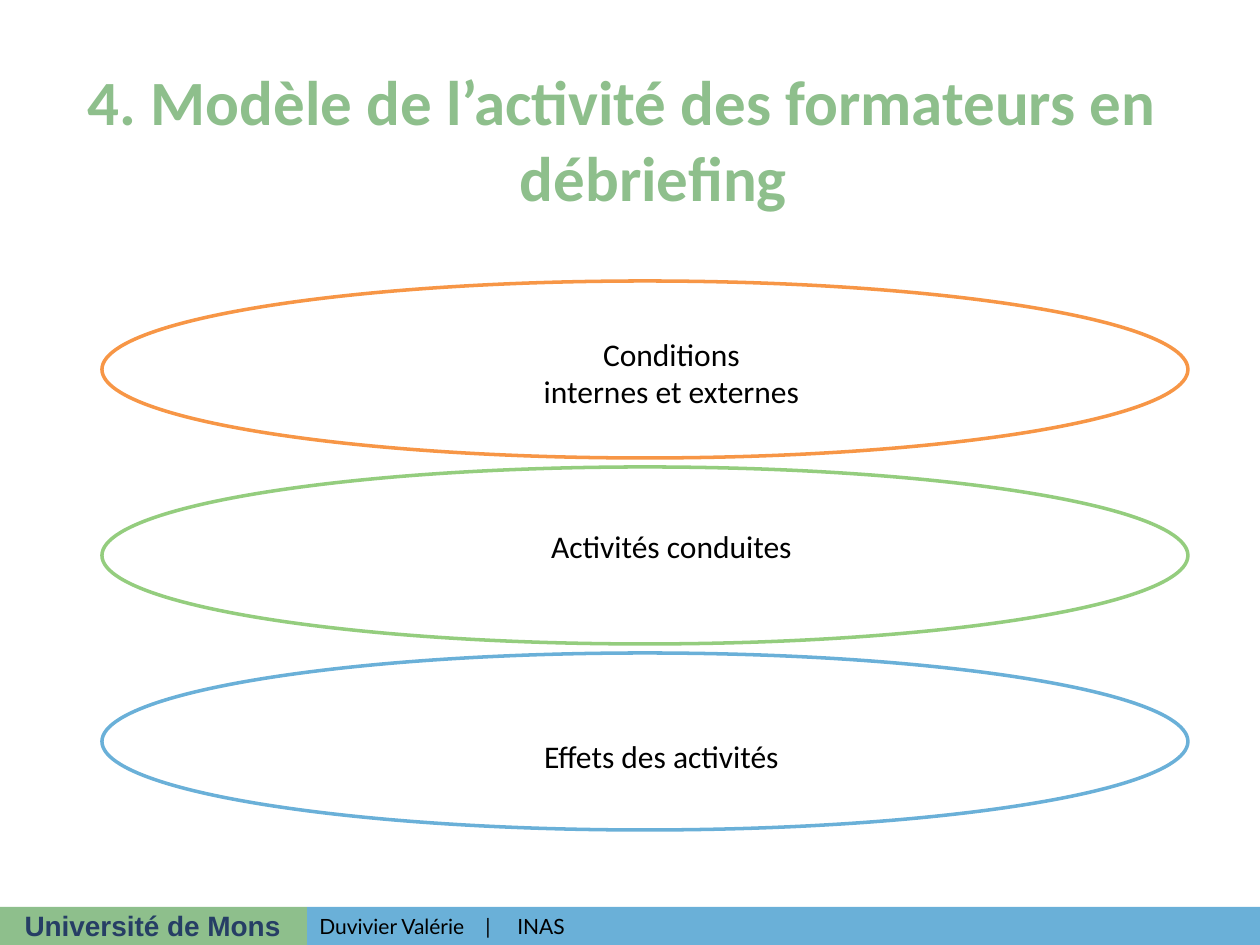
"""Build the slide on the model of trainers' activity in debriefing."""
from dataclasses import dataclass

import lxml.etree
import pptx
import pptx.dml.color
import pptx.enum.shapes
import pptx.enum.text
import pptx.oxml.ns
import pptx.util

EMU_PER_PX = 914400 / 126
SHAPES = pptx.enum.shapes.MSO_SHAPE
ALIGN = pptx.enum.text.PP_ALIGN
ANCHOR = pptx.enum.text.MSO_ANCHOR


@dataclass(frozen=True)
class Theme:
    green: str = "8EBF8C"
    blue: str = "6AB0D8"
    orange: str = "F79646"
    leaf: str = "94CD7E"
    navy: str = "263E65"
    black: str = "000000"
    white: str = "FFFFFF"
    body_font: str = "Calibri"
    brand_font: str = "Arial"
    footer_font: str = "Lato"
    title_size: int = 36
    label_size: int = 18
    brand_size: int = 16
    footer_size: int = 12
    line_width: int = 2


@dataclass(frozen=True)
class Box:
    left: int
    top: int
    width: int
    height: int


@dataclass(frozen=True)
class Stage:
    lines: tuple[str, ...]
    color: str
    label_left: int
    label_top: int


THEME = Theme()
STAGES = (
    Stage(("Conditions", "internes et externes"), THEME.orange, 421, 331),
    Stage(("Activités conduites",), THEME.leaf, 421, 504),
    Stage(("Effets des activités",), THEME.blue, 411, 714),
)
FIRST_ELLIPSE = Box(102, 281, 1086, 177)
ELLIPSE_STEP = 186
BAR_TOP, BAR_HEIGHT, BAR_SPLIT = 907, 38, 307
SLIDE_WIDTH, SLIDE_HEIGHT = 1260, 945
HANGING_INDENT = 63
FOOTER_TABS = (166, 198)


def px(value: int) -> pptx.util.Emu:
    """Turn pixels into EMU."""
    return pptx.util.Emu(round(value * EMU_PER_PX))


def rgb(value: str) -> pptx.dml.color.RGBColor:
    """Turn a hexadecimal string into a colour."""
    return pptx.dml.color.RGBColor.from_string(value)


def place(box: Box) -> tuple[pptx.util.Emu, ...]:
    """Return the left, top, width and height of a box in EMU."""
    return px(box.left), px(box.top), px(box.width), px(box.height)


def write_text(shape, *lines: str, font: str, size: int, color: str,
               bold: bool = False, align=ALIGN.CENTER, anchor=ANCHOR.MIDDLE) -> None:
    """Write formatted lines, one paragraph each, into a shape."""
    frame = shape.text_frame
    frame.word_wrap = True
    frame.auto_size = pptx.enum.text.MSO_AUTO_SIZE.NONE
    frame.vertical_anchor = anchor
    frame.text = "\n".join(lines)
    for paragraph in frame.paragraphs:
        paragraph.alignment = align
        for run in paragraph.runs:
            run.font.name = font
            run.font.size = pptx.util.Pt(size)
            run.font.bold = bold
            run.font.color.rgb = rgb(color)


def draw_shape(slide, kind, box: Box, fill: str | None = None, line: str | None = None):
    """Draw a preset shape with an optional fill and outline."""
    shape = slide.shapes.add_shape(kind, *place(box))
    shape.shadow.inherit = False
    if fill:
        shape.fill.solid()
        shape.fill.fore_color.rgb = rgb(fill)
    else:
        shape.fill.background()
    if line:
        shape.line.color.rgb = rgb(line)
        shape.line.width = pptx.util.Pt(THEME.line_width)
    else:
        shape.line.fill.background()
    return shape


def draw_title(slide) -> None:
    """Place the title with its hanging indent."""
    title = slide.shapes.title
    title.left, title.top, title.width, title.height = place(Box(55, 50, 1134, 177))
    write_text(title, "4. Modèle de l’activité des formateurs en débriefing",
               font=THEME.body_font, size=THEME.title_size, color=THEME.green, bold=True)
    properties = title.text_frame.paragraphs[0]._p.get_or_add_pPr()
    properties.set("marL", str(px(HANGING_INDENT)))
    properties.set("indent", str(-px(HANGING_INDENT)))


def draw_footer(slide) -> None:
    """Draw the two-colour bar with the institution and the author."""
    draw_shape(slide, SHAPES.RECTANGLE, Box(0, BAR_TOP, BAR_SPLIT, BAR_HEIGHT), THEME.green)
    draw_shape(slide, SHAPES.RECTANGLE,
               Box(BAR_SPLIT, BAR_TOP, SLIDE_WIDTH - BAR_SPLIT, BAR_HEIGHT), THEME.blue)
    brand = slide.shapes.add_textbox(*place(Box(-1, 902, BAR_SPLIT, 47)))
    write_text(brand, "Université de Mons", font=THEME.brand_font, size=THEME.brand_size,
               color=THEME.navy, bold=True, anchor=ANCHOR.TOP)
    author = slide.shapes.add_textbox(*place(Box(BAR_SPLIT, BAR_TOP, 882, BAR_HEIGHT)))
    write_text(author, "Duvivier Valérie\t|\tINAS", font=THEME.footer_font,
               size=THEME.footer_size, color=THEME.black, align=ALIGN.LEFT)
    properties = author.text_frame.paragraphs[0]._p.get_or_add_pPr()
    tabs = lxml.etree.SubElement(properties, pptx.oxml.ns.qn("a:tabLst"))
    for position in FOOTER_TABS:
        lxml.etree.SubElement(tabs, pptx.oxml.ns.qn("a:tab"), pos=str(px(position)), algn="l")


def draw_stages(slide) -> None:
    """Draw the stacked ellipses, then their labels."""
    first = FIRST_ELLIPSE
    for index, stage in enumerate(STAGES):
        box = Box(first.left, first.top + index * ELLIPSE_STEP, first.width, first.height)
        draw_shape(slide, SHAPES.OVAL, box, line=stage.color)
    for stage in STAGES:
        label = draw_shape(slide, SHAPES.ROUNDED_RECTANGLE,
                           Box(stage.label_left, stage.label_top, 501, 83), line=THEME.white)
        write_text(label, *stage.lines, font=THEME.body_font, size=THEME.label_size,
                   color=THEME.black)


def main() -> None:
    """Build and save the presentation."""
    presentation = pptx.Presentation()
    presentation.slide_width = px(SLIDE_WIDTH)
    presentation.slide_height = px(SLIDE_HEIGHT)
    slide = presentation.slides.add_slide(presentation.slide_layouts[5])
    draw_footer(slide)
    draw_title(slide)
    draw_stages(slide)
    presentation.save("out.pptx")


if __name__ == "__main__":
    main()
